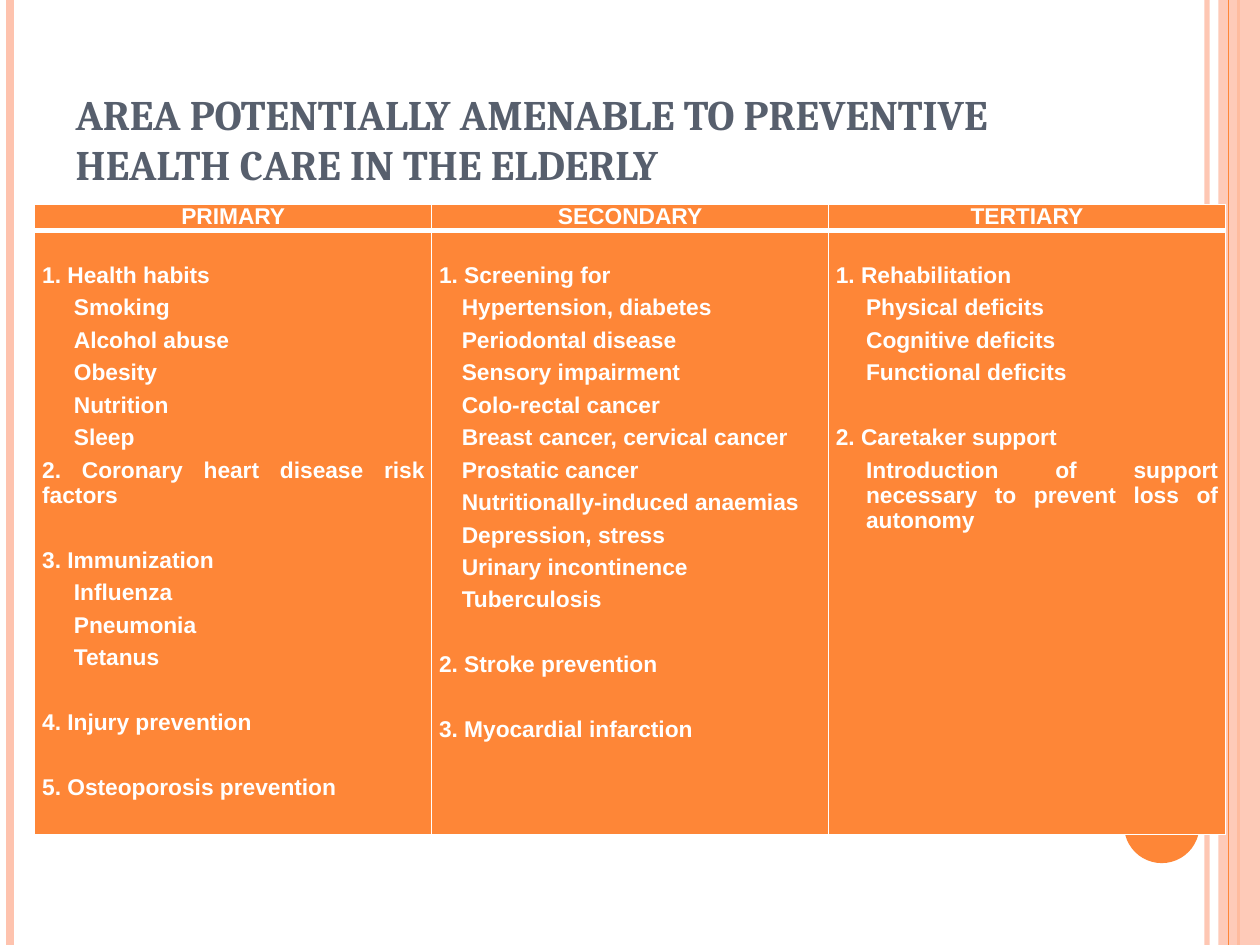
from dataclasses import dataclass

from lxml import etree
from pptx import Presentation
from pptx.dml.color import RGBColor
from pptx.enum.shapes import MSO_CONNECTOR, MSO_SHAPE
from pptx.enum.text import MSO_ANCHOR, MSO_AUTO_SIZE, PP_ALIGN
from pptx.oxml.ns import qn
from pptx.util import Cm, Pt

STRAIGHT = MSO_CONNECTOR.STRAIGHT
RECT, OVAL = MSO_SHAPE.RECTANGLE, MSO_SHAPE.OVAL
CENTER, JUSTIFY, LEFT = PP_ALIGN.CENTER, PP_ALIGN.JUSTIFY, PP_ALIGN.LEFT
BOTTOM, NO_FIT = MSO_ANCHOR.BOTTOM, MSO_AUTO_SIZE.NONE
ORANGE, PEACH, WHITE, SLATE = "FE8637", "FEC3AE", "FFFFFF", "575F6D"
SLIDE_W, SLIDE_H = 25.4, 19.05
COL_W, HEAD_H, BODY_H = 8, 0.53, 12.17
LINE_GAP = 18.5


@dataclass
class Rule:
    x: float
    color: str
    width: float
    alpha: int = 100


@dataclass
class Group:
    heading: str
    items: tuple[str, ...] = ()
    gap: bool = True


@dataclass
class Column:
    title: str
    indent: float
    groups: tuple[Group, ...]


RULES = (
    Rule(24.33, PEACH, 3, 93),
    Rule(0.2, PEACH, 4.5),
    Rule(24.97, ORANGE, 1.5),
)
INNER_RULE = Rule(24.77, ORANGE, 0.75)

COLUMNS = (
    Column("PRIMARY", 0.64, (
        Group("1. Health habits",
              ("Smoking", "Alcohol abuse", "Obesity", "Nutrition", "Sleep")),
        Group("2. Coronary heart disease risk factors", gap=False),
        Group("3. Immunization", ("Influenza", "Pneumonia", "Tetanus")),
        Group("4. Injury prevention"),
        Group("5. Osteoporosis prevention"),
    )),
    Column("SECONDARY", 0.46, (
        Group("1. Screening for",
              ("Hypertension, diabetes", "Periodontal disease",
               "Sensory impairment", "Colo-rectal cancer",
               "Breast cancer, cervical cancer", "Prostatic cancer",
               "Nutritionally-induced anaemias", "Depression, stress",
               "Urinary incontinence", "Tuberculosis")),
        Group("2. Stroke prevention"),
        Group("3. Myocardial infarction"),
    )),
    Column("TERTIARY", 0.61, (
        Group("1. Rehabilitation",
              ("Physical deficits", "Cognitive deficits",
               "Functional deficits")),
        Group("2. Caretaker support",
              ("Introduction of support necessary to prevent loss of autonomy",)),
    )),
)


def rgb(color: str) -> RGBColor:
    return RGBColor.from_string(color)


def set_alpha(element, percent: int) -> None:
    if percent < 100:
        clr = next(element.iter(qn("a:srgbClr")))
        etree.SubElement(clr, qn("a:alpha"), val=str(percent * 1000))


def draw_rule(slide, rule: Rule) -> None:
    line = slide.shapes.add_connector(
        STRAIGHT, Cm(rule.x), Cm(0), Cm(rule.x), Cm(SLIDE_H))
    line.line.color.rgb = rgb(rule.color)
    line.line.width = Pt(rule.width)
    sp_pr = line._element.spPr
    set_alpha(sp_pr, rule.alpha)
    etree.SubElement(sp_pr, qn("a:effectLst"))


def draw_shape(slide, kind, x: float, y: float, w: float, h: float,
               color: str, alpha: int = 100) -> None:
    sp = slide.shapes.add_shape(kind, Cm(x), Cm(y), Cm(w), Cm(h))
    sp.shadow.inherit = False
    sp.fill.solid()
    sp.fill.fore_color.rgb = rgb(color)
    sp.line.fill.background()
    set_alpha(sp._element.spPr, alpha)


def format_runs(p, size: float, font: str, color: str) -> None:
    for r in p.runs:
        r.font.size = Pt(size)
        r.font.name = font
        r.font.bold = True
        r.font.color.rgb = rgb(color)


def set_title(slide, text: str) -> None:
    sp = slide.shapes.title
    sp.left, sp.top, sp.width, sp.height = Cm(1.27), Cm(0.76), Cm(20.75), Cm(3.18)
    tf = sp.text_frame
    tf.text = text
    tf.auto_size = NO_FIT
    tf.word_wrap = True
    tf.vertical_anchor = BOTTOM
    p = tf.paragraphs[0]
    p.alignment = LEFT
    format_runs(p, 24, "Cambria", SLATE)


def style_cell(cell, top: float, bottom: float, inset: float = 0) -> None:
    cell.margin_left = cell.margin_right = Cm(0.15)
    cell.margin_top, cell.margin_bottom = Cm(inset), Cm(0)
    tc_pr = cell._tc.get_or_add_tcPr()
    for side, width in (("L", 1), ("R", 1), ("T", top), ("B", bottom)):
        ln = etree.SubElement(tc_pr, qn(f"a:ln{side}"), w=str(Pt(width)))
        fill = etree.SubElement(ln, qn("a:solidFill"))
        etree.SubElement(fill, qn("a:srgbClr"), val=WHITE)
    cell.fill.solid()
    cell.fill.fore_color.rgb = rgb(ORANGE)


def write_line(cell, text: str, align, first: bool = False,
               before: float = 2, indent: float = 0) -> None:
    tf = cell.text_frame
    p = tf.paragraphs[0] if first else tf.add_paragraph()
    p.text = text
    p.alignment = align
    p.space_before = Pt(0 if first else before)
    p.space_after = Pt(2)
    if indent:
        p._p.get_or_add_pPr().set("marL", str(Cm(indent)))
    format_runs(p, 13, "Arial", WHITE)


def fill_column(head, body, column: Column) -> None:
    style_cell(head, 1, 3)
    write_line(head, column.title, CENTER, first=True)
    style_cell(body, 3, 1, inset=0.65)
    for i, group in enumerate(column.groups):
        before = 2 + LINE_GAP if group.gap else 2
        write_line(body, group.heading, JUSTIFY, first=i == 0, before=before)
        for item in group.items:
            write_line(body, item, JUSTIFY, indent=column.indent)


def draw_table(slide, columns: tuple[Column, ...]) -> None:
    table = slide.shapes.add_table(
        2, len(columns), Cm(0.7), Cm(4.12),
        Cm(COL_W * len(columns)), Cm(HEAD_H + BODY_H)).table
    table.horz_banding = False
    table.rows[0].height, table.rows[1].height = Cm(HEAD_H), Cm(BODY_H)
    for i, column in enumerate(columns):
        table.columns[i].width = Cm(COL_W)
        fill_column(table.cell(0, i), table.cell(1, i), column)


def main() -> None:
    prs = Presentation()
    prs.slide_width, prs.slide_height = Cm(SLIDE_W), Cm(SLIDE_H)
    slide = prs.slides.add_slide(prs.slide_layouts[5])
    for rule in RULES:
        draw_rule(slide, rule)
    draw_shape(slide, RECT, 24.56, 0, 0.84, SLIDE_H, PEACH, 87)
    draw_rule(slide, INNER_RULE)
    draw_shape(slide, OVAL, 22.66, 15.88, 1.52, 1.52, ORANGE)
    set_title(slide, "AREA POTENTIALLY AMENABLE TO PREVENTIVE "
                     "HEALTH CARE IN THE ELDERLY")
    draw_table(slide, COLUMNS)
    prs.save("out.pptx")


if __name__ == "__main__":
    main()
